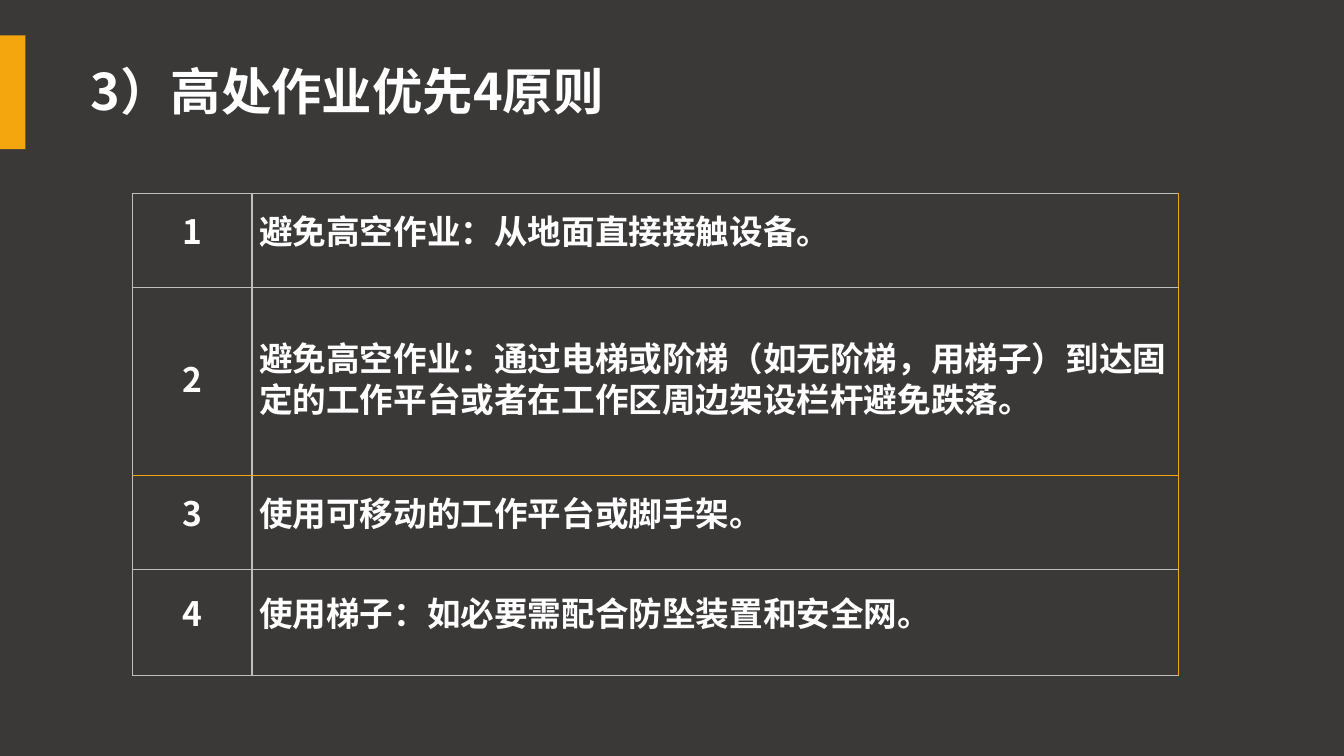
from dataclasses import dataclass

import pptx
import pptx.dml.color
import pptx.enum.shapes
import pptx.enum.text
import pptx.oxml.ns
import pptx.util
from lxml import etree

Cm = pptx.util.Cm
Pt = pptx.util.Pt
ALIGN = pptx.enum.text.PP_ALIGN
MIDDLE = pptx.enum.text.MSO_ANCHOR.MIDDLE
qn = pptx.oxml.ns.qn

FONT = "Noto Sans CJK SC"
DARK, ORANGE, WHITE, GREY = "3B3838", "F3A60D", "FFFFFF", "BFBFBF"
COLUMN_WIDTHS = (3.02, 23.34)


@dataclass
class Principle:
    text: str
    height: float
    spacing: int = 20
    top: str = GREY
    bottom: str = GREY


PRINCIPLES = [
    Principle("避免高空作业：从地面直接接触设备。", 2.36),
    Principle(
        "避免高空作业：通过电梯或阶梯（如无阶梯，用梯子）到达固定的工作平台"
        "或者在工作区周边架设栏杆避免跌落。",
        4.75, spacing=29, bottom=ORANGE,
    ),
    Principle("使用可移动的工作平台或脚手架。", 2.36, top=ORANGE),
    Principle("使用梯子：如必要需配合防坠装置和安全网。", 2.67),
]


def rgb(value: str) -> pptx.dml.color.RGBColor:
    return pptx.dml.color.RGBColor.from_string(value)


def format_paragraph(p, size: int, align, spacing) -> None:
    p.alignment = align
    p.line_spacing = spacing
    p.font.size = Pt(size)
    p.font.bold = True
    p.font.name = FONT
    p.font.color.rgb = rgb(WHITE)
    ea = etree.SubElement(p.font._element, qn("a:ea"))
    ea.set("typeface", FONT)


def add_border(cell, side: str, color: str) -> None:
    ln = etree.SubElement(cell._tc.get_or_add_tcPr(), qn(f"a:ln{side}"))
    ln.set("w", str(Pt(1)))
    fill = etree.SubElement(ln, qn("a:solidFill"))
    etree.SubElement(fill, qn("a:srgbClr")).set("val", color)


def fill_cell(cell, text: str, align, principle: Principle, right: str) -> None:
    borders = {"L": GREY, "R": right, "T": principle.top, "B": principle.bottom}
    for side, color in borders.items():
        add_border(cell, side, color)
    cell.fill.background()
    cell.vertical_anchor = MIDDLE
    cell.margin_left = cell.margin_right = Cm(0.18)
    cell.margin_top = cell.margin_bottom = 0
    cell.text = text
    format_paragraph(cell.text_frame.paragraphs[0], 24, align, Pt(principle.spacing))


def add_accent(slide) -> None:
    sp = slide.shapes.add_shape(
        pptx.enum.shapes.MSO_SHAPE.RECTANGLE, Cm(-0.02), Cm(0.89), Cm(0.66), Cm(2.87))
    sp.shadow.inherit = False
    sp.fill.solid()
    sp.fill.fore_color.rgb = rgb(ORANGE)
    sp.line.fill.background()


def set_title(slide, text: str) -> None:
    sp = slide.shapes.title
    sp.left, sp.top, sp.width, sp.height = Cm(2.03), Cm(1.07), Cm(22.23), Cm(2.59)
    tf = sp.text_frame
    tf.text = text
    tf.word_wrap = True
    tf.auto_size = pptx.enum.text.MSO_AUTO_SIZE.NONE
    tf.vertical_anchor = MIDDLE
    format_paragraph(tf.paragraphs[0], 36, ALIGN.LEFT, 0.9)


def add_principles(slide, principles: list[Principle]) -> None:
    table = slide.shapes.add_table(
        len(principles), len(COLUMN_WIDTHS), Cm(3.33), Cm(4.88),
        Cm(sum(COLUMN_WIDTHS)), Cm(sum(item.height for item in principles))).table
    table.first_row = table.horz_banding = False
    for column, width in zip(table.columns, COLUMN_WIDTHS):
        column.width = Cm(width)
    for i, item in enumerate(principles):
        table.rows[i].height = Cm(item.height)
        fill_cell(table.cell(i, 0), str(i + 1), ALIGN.CENTER, item, GREY)
        fill_cell(table.cell(i, 1), item.text, ALIGN.LEFT, item, ORANGE)


def main() -> None:
    prs = pptx.Presentation()
    prs.slide_width, prs.slide_height = Cm(33.87), Cm(19.05)
    s = prs.slides.add_slide(prs.slide_layouts[5])
    s.background.fill.solid()
    s.background.fill.fore_color.rgb = rgb(DARK)
    add_accent(s)
    set_title(s, "3）高处作业优先4原则")
    add_principles(s, PRINCIPLES)
    prs.save("out.pptx")


if __name__ == "__main__":
    main()
